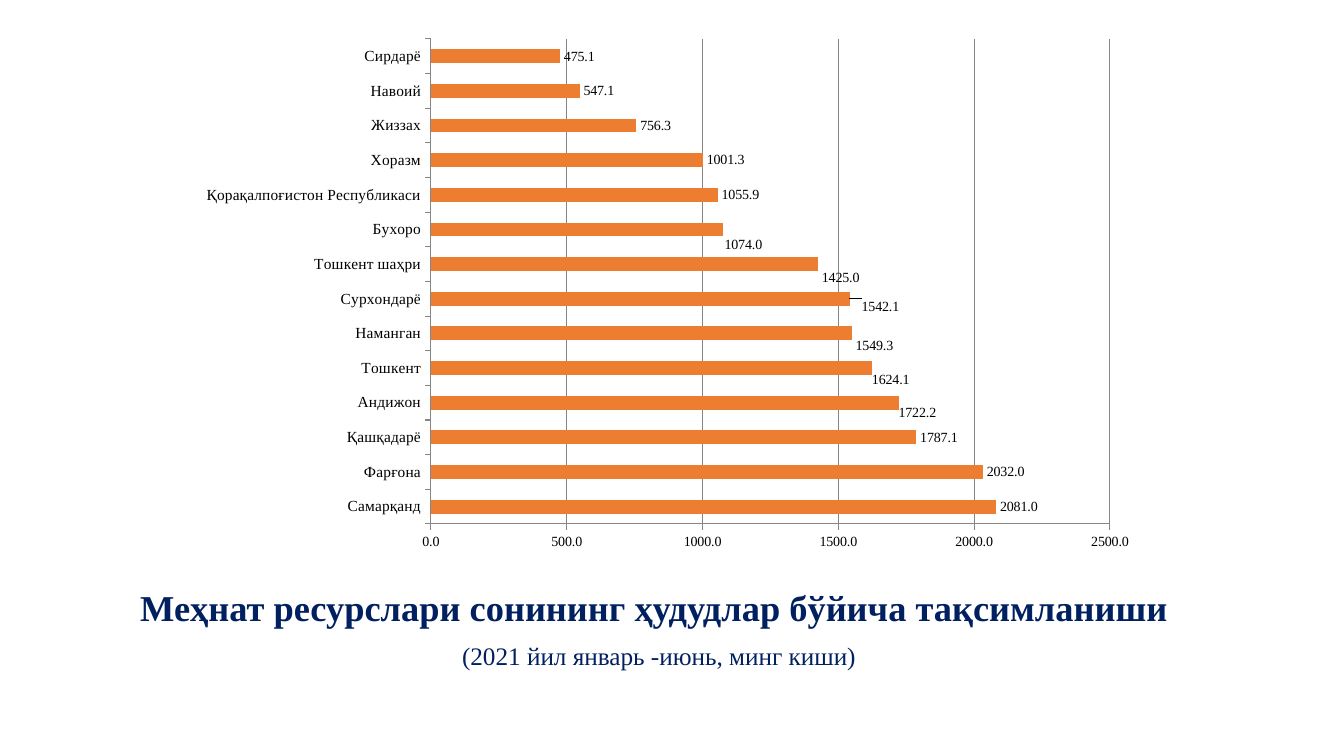
from pptx import Presentation
from pptx.chart.data import CategoryChartData
from pptx.dml.color import RGBColor
from pptx.enum.chart import XL_CHART_TYPE, XL_LABEL_POSITION, XL_TICK_MARK
from pptx.enum.text import PP_ALIGN
from pptx.oxml import parse_xml
from pptx.oxml.ns import nsdecls
from pptx.util import Pt

NAVY = RGBColor(0x00, 0x20, 0x60)
ORANGE = RGBColor(0xED, 0x7D, 0x31)
GRAY = RGBColor(0x86, 0x86, 0x86)
BLACK = RGBColor(0x00, 0x00, 0x00)
BAR = XL_CHART_TYPE.BAR_CLUSTERED
OUTER = XL_LABEL_POSITION.OUTSIDE_END
TICK = XL_TICK_MARK.OUTSIDE
NONE = XL_TICK_MARK.NONE
CENTER = PP_ALIGN.CENTER

SERIF = "Times New Roman"
FORMAT = "0.0"
SCALE = 914400 / 100.8

REGIONS = {
    "Самарқанд": 2081, "Фарғона": 2032, "Қашқадарё": 1787.1,
    "Андижон": 1722.2, "Тошкент": 1624.1, "Наманган": 1549.3,
    "Сурхондарё": 1542.1, "Тошкент шаҳри": 1425, "Бухоро": 1074,
    "Қорақалпоғистон Республикаси": 1055.9, "Хоразм": 1001.3,
    "Жиззах": 756.3, "Навоий": 547.1, "Сирдарё": 475.1,
}
# Label shifts in px, by region
SHIFTS = {
    "Андижон": (-4, 10), "Тошкент": (-4, 12), "Наманган": (0, 12),
    "Сурхондарё": (8, 8), "Тошкент шаҳри": (0, 14), "Бухоро": (-2, 15),
}
LINES = [
    ("Меҳнат ресурслари сонининг ҳудудлар бўйича тақсимланиши ", 26, True),
    ("(2021 йил январь -июнь, минг киши)", 18, False),
]


def px(num):
    return round(num * SCALE)


def assign(item, values):
    for name, value in values.items():
        setattr(item, name, value)


def layout(inner=False, **parts):
    """Manual chart layout; parts are fractions of the chart's size."""
    rows = '<c:layoutTarget val="inner"/>' if inner else ""
    if inner:
        rows += '<c:xMode val="edge"/><c:yMode val="edge"/>'
    rows += "".join(f'<c:{key} val="{val:.4f}"/>' for key, val in parts.items())
    return parse_xml(f'<c:layout {nsdecls("c")}><c:manualLayout>{rows}'
                     "</c:manualLayout></c:layout>")


class Board:
    def __init__(self, slide):
        self.slide = slide

    def style(self, font, size, color, bold=False):
        assign(font, {"name": SERIF, "size": Pt(size), "bold": bold})
        font.color.rgb = color

    def text(self, box, lines):
        frame = self.slide.shapes.add_textbox(*map(px, box)).text_frame
        frame.word_wrap = True
        for i, (words, size, bold) in enumerate(lines):
            para = frame.add_paragraph() if i else frame.paragraphs[0]
            assign(para, {"alignment": CENTER, "line_spacing": 0.9,
                          "space_before": Pt(10)})
            run = para.add_run()
            run.text = words
            self.style(run.font, size, NAVY, bold)

    def axis(self, axis, size, values):
        assign(axis, {"major_tick_mark": TICK, "minor_tick_mark": NONE, **values})
        self.style(axis.tick_labels.font, size, BLACK)
        self.line(axis.format.line)

    def line(self, line):
        line.color.rgb = GRAY
        line.width = Pt(0.75)

    def bars(self, box, plot, regions, shifts):
        """Bar chart in box; plot is the inner area, both in slide px."""
        data = CategoryChartData(number_format=FORMAT)
        data.categories = list(regions)
        data.add_series("Series 1", list(regions.values()))
        chart = self.slide.shapes.add_chart(BAR, *map(px, box), data).chart
        assign(chart, {"has_legend": False, "has_title": False})
        self.style(chart.font, 10, BLACK)

        self.axis(chart.category_axis, 11, {"has_major_gridlines": False})
        value = chart.value_axis
        self.axis(value, 10, {"minimum_scale": 0, "maximum_scale": 2500,
                              "major_unit": 500, "has_major_gridlines": True})
        assign(value.tick_labels, {"number_format": FORMAT,
                                   "number_format_is_linked": False})
        self.line(value.major_gridlines.format.line)

        left, top, wide, high = box
        area = chart.plots[0]
        assign(area, {"gap_width": 150, "vary_by_categories": False})
        space = chart._chartSpace.xpath("c:chart/c:plotArea")[0]
        for old in space.xpath("c:layout"):
            space.remove(old)
        space.insert(0, layout(True, x=(plot[0] - left) / wide,
                               y=(plot[1] - top) / high,
                               w=plot[2] / wide, h=plot[3] / high))

        series = area.series[0]
        series.format.fill.solid()
        series.format.fill.fore_color.rgb = ORANGE
        labels = series.data_labels
        assign(labels, {"show_value": True, "position": OUTER,
                        "number_format": FORMAT,
                        "number_format_is_linked": False})
        self.style(labels.font, 10, BLACK)
        names = list(regions)
        for name, (dx, dy) in shifts.items():
            spot = names.index(name)
            label = series.points[spot].data_label
            label.position = OUTER
            self.style(label.font, 10, BLACK)
            mark = series._element.xpath(
                f"c:dLbls/c:dLbl/c:idx[@val='{spot}']")[0]
            mark.addnext(parse_xml(f'<c:numFmt {nsdecls("c")} '
                                   f'formatCode="{FORMAT}" sourceLinked="0"/>'))
            mark.addnext(layout(x=dx / wide, y=dy / high))


def main():
    deck = Presentation()
    assign(deck, {"slide_width": px(1344), "slide_height": px(756)})
    board = Board(deck.slides.add_slide(deck.slide_layouts[6]))
    board.text((41, 585, 1236, 143), LINES)
    board.bars((187, 29, 961, 532), (431, 39, 679, 485), REGIONS, SHIFTS)
    deck.save("out.pptx")


if __name__ == "__main__":
    main()
